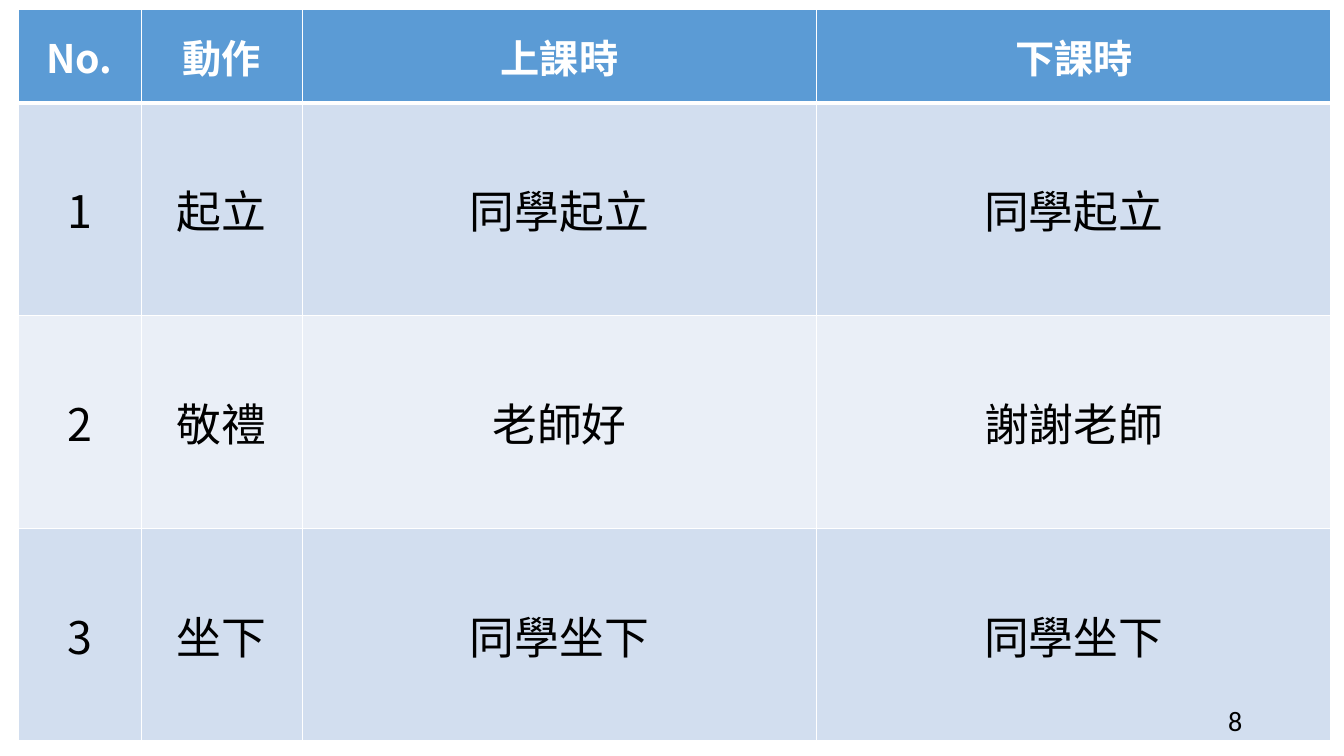
from lxml.etree import SubElement
from pptx import Presentation
from pptx.dml.color import RGBColor
from pptx.enum.text import MSO_ANCHOR, PP_ALIGN
from pptx.oxml.ns import qn
from pptx.util import Inches, Pt

WHITE = RGBColor(0xFF, 0xFF, 0xFF)
BLACK = RGBColor(0x00, 0x00, 0x00)
HEADER_BLUE = RGBColor(0x5B, 0x9B, 0xD5)
BAND_FILLS = [RGBColor(0xD2, 0xDE, 0xEF), RGBColor(0xEA, 0xEF, 0xF7)]

TABLE_FONT = "Noto Sans CJK SC"
HEADER_FORMAT = {"name": TABLE_FONT, "size": Pt(28), "bold": True}
BODY_FORMAT = {"name": TABLE_FONT, "size": Pt(32), "bold": False}
NUMBER_FORMAT = {"name": "Calibri", "size": Pt(20)}

COLUMN_WIDTHS = [1.22, 1.6, 5.1, 5.1]
ROW_HEIGHTS = [0.93, 2.11, 2.11, 2.11]
COMMANDS = [
    ["No.", "動作", "上課時", "下課時"],
    ["1", "起立", "同學起立", "同學起立"],
    ["2", "敬禮", "老師好", "謝謝老師"],
    ["3", "坐下", "同學坐下", "同學坐下"],
]


def write_text(frame, text, alignment, color, format_values):
    frame.vertical_anchor = MSO_ANCHOR.MIDDLE
    para = frame.paragraphs[0]
    para.alignment = alignment
    span = para.add_run()
    span.text = text
    for name, value in format_values.items():
        setattr(span.font, name, value)
    span.font.color.rgb = color
    east_asian = SubElement(span.font._element, qn("a:ea"))
    east_asian.set("typeface", format_values["name"])


def add_borders(cell, widths):
    properties = cell._tc.get_or_add_tcPr()
    for side, width in widths.items():
        line = SubElement(properties, qn(f"a:ln{side}"), w=str(Pt(width)))
        fill = SubElement(line, qn("a:solidFill"))
        SubElement(fill, qn("a:srgbClr"), val=str(WHITE))


def add_command_table(page, left, top):
    size = Inches(sum(COLUMN_WIDTHS)), Inches(sum(ROW_HEIGHTS))
    table = page.shapes.add_table(
        len(COMMANDS), len(COLUMN_WIDTHS), left, top, *size
    ).table
    for column, width in zip(table.columns, COLUMN_WIDTHS):
        column.width = Inches(width)
    for index, (row, height, texts) in enumerate(
        zip(table.rows, ROW_HEIGHTS, COMMANDS)
    ):
        row.height = Inches(height)
        is_header = index == 0
        fill_color = HEADER_BLUE if is_header else BAND_FILLS[(index - 1) % 2]
        text_color = WHITE if is_header else BLACK
        format_values = HEADER_FORMAT if is_header else BODY_FORMAT
        borders = {
            "L": 1,
            "R": 1,
            "T": 3 if index == 1 else 1,
            "B": 3 if is_header else 1,
        }
        for cell, text in zip(row.cells, texts):
            add_borders(cell, borders)
            cell.fill.solid()
            cell.fill.fore_color.rgb = fill_color
            cell.vertical_anchor = MSO_ANCHOR.MIDDLE
            write_text(
                cell.text_frame, text, PP_ALIGN.CENTER, text_color, format_values
            )


def add_page_number(page, left, top, width, height):
    box = page.shapes.add_textbox(left, top, width, height)
    box.text_frame.word_wrap = True
    write_text(box.text_frame, "8", PP_ALIGN.RIGHT, BLACK, NUMBER_FORMAT)


def main():
    deck = Presentation()
    deck.slide_width = Inches(13.33)
    deck.slide_height = Inches(7.5)
    page = deck.slides.add_slide(deck.slide_layouts[6])
    add_command_table(page, Inches(0.18), Inches(0.09))
    add_page_number(page, Inches(9.42), Inches(6.95), Inches(3), Inches(0.4))
    deck.save("out.pptx")


if __name__ == "__main__":
    main()
